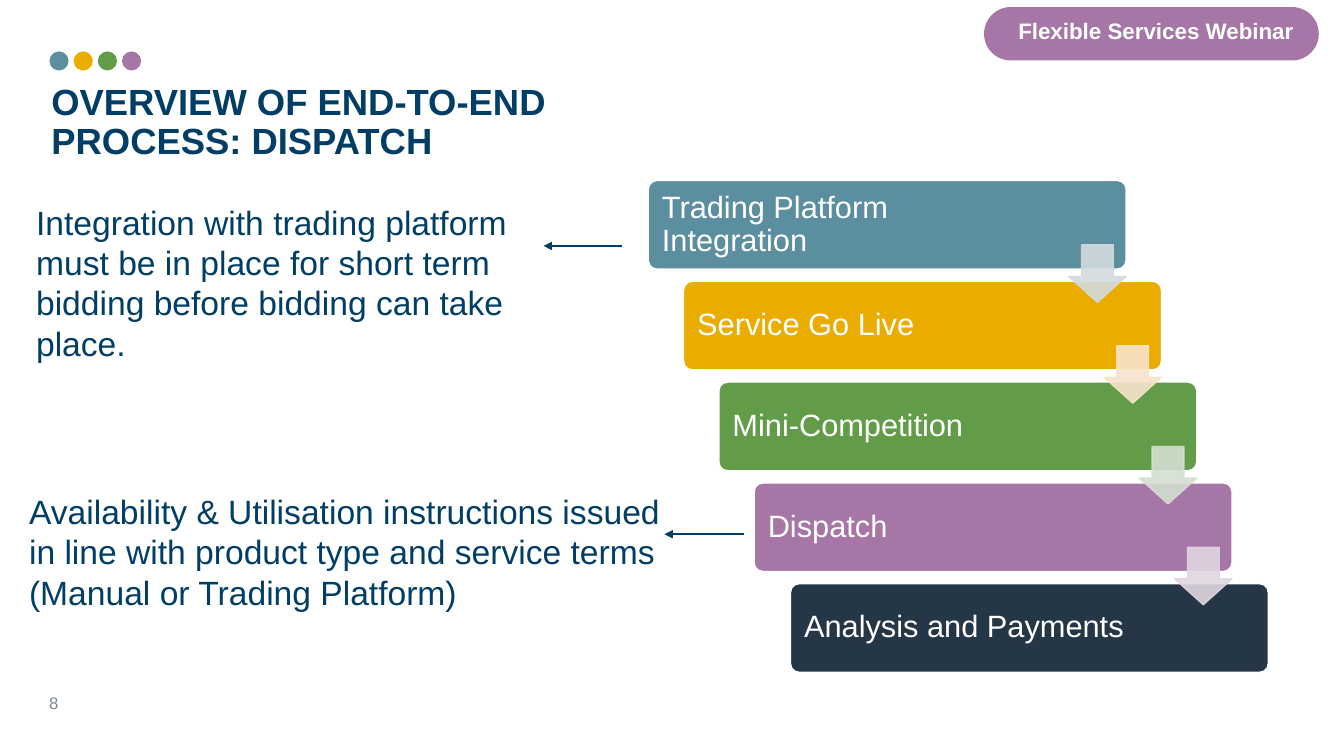
from lxml import etree
from pptx import Presentation
from pptx import util as u
from pptx.dml.color import RGBColor
from pptx.enum import shapes, text
from pptx.oxml.ns import qn

NAVY, WHITE, GREY = "003E66", "FFFFFF", "808999"
TEAL, AMBER, GREEN, PURPLE, SLATE = "5B8E9F", "EBAC00", "629C49", "A677A6", "253746"

HEADING = "OVERVIEW OF END-TO-END PROCESS: DISPATCH"
BADGE = "Flexible Services Webinar"
PAGE = "8"
DOTS = [TEAL, AMBER, GREEN, PURPLE]
STAGES = [
    ("Trading Platform Integration", TEAL),
    ("Service Go Live", AMBER),
    ("Mini-Competition", GREEN),
    ("Dispatch", PURPLE),
    ("Analysis and Payments", SLATE),
]
STEP_TINTS = ["D2DBDF", "F7E3CC", "D3DED0", "E1D6E1"]
NOTES = [
    ("Integration with trading platform must be in place for short term "
     "bidding before bidding can take place.",
     (26, 195, 499, 212), (617, 539, 244)),
    ("Availability & Utilisation instructions issued in line with product "
     "type and service terms (Manual or Trading Platform)",
     (19, 482, 670, 155), (738, 659, 530)),
]


def px(n):
    return u.Emu(n * 9144)


def colour(value):
    return RGBColor.from_string(value)


def write(shape, words, size, tint, bold=False, insets=(10, 5, 10, 5),
          anchor=text.MSO_ANCHOR.TOP, align=text.PP_ALIGN.LEFT, spacing=None):
    frame = shape.text_frame
    frame.text = words
    frame.word_wrap = True
    frame.auto_size = text.MSO_AUTO_SIZE.NONE
    frame.vertical_anchor = anchor
    (frame.margin_left, frame.margin_top,
     frame.margin_right, frame.margin_bottom) = map(px, insets)
    paragraph = frame.paragraphs[0]
    paragraph.alignment = align
    if spacing:
        paragraph.line_spacing = spacing
    font = paragraph.runs[0].font
    font.name, font.size, font.bold = "Arial", u.Pt(size), bold
    font.color.rgb = colour(tint)


def draw(kind, box, fill, line=None, adjust=()):
    shape = slide.shapes.add_shape(kind, *map(px, box))
    shape.shadow.inherit = False
    shape.fill.solid()
    shape.fill.fore_color.rgb = colour(fill)
    if line:
        shape.line.color.rgb = colour(line)
        shape.line.width = u.Pt(1)
    else:
        shape.line.fill.background()
    for i, value in enumerate(adjust):
        shape.adjustments[i] = value
    return shape


def add_pointer(start, end, y):
    pointer = slide.shapes.add_connector(
        shapes.MSO_CONNECTOR.STRAIGHT, px(start), px(y), px(end), px(y))
    pointer.line.color.rgb = colour(NAVY)
    pointer.line.width = u.Pt(1.5)
    etree.SubElement(pointer.line._get_or_add_ln(), qn("a:tailEnd"), type="triangle")
    etree.SubElement(pointer._element.spPr, qn("a:effectLst"))


deck = Presentation()
deck.slide_width, deck.slide_height = px(1333), px(750)
slide = deck.slides.add_slide(deck.slide_layouts[5])
SHAPE, MIDDLE = shapes.MSO_SHAPE, text.MSO_ANCHOR.MIDDLE

heading = slide.shapes.title
heading.left, heading.top, heading.width, heading.height = map(px, (51, 84, 616, 76))
write(heading, HEADING, 26, NAVY, bold=True, insets=(0, 0, 0, 0),
      anchor=MIDDLE, spacing=0.9)

page = slide.shapes.add_textbox(*map(px, (39, 682, 73, 30)))
write(page, PAGE, 12, GREY)

for i, tint in enumerate(DOTS):
    draw(SHAPE.OVAL, (49 + 24 * i, 51, 19, 19), tint)

badge = draw(SHAPE.ROUNDED_RECTANGLE, (976, 7, 332, 53), PURPLE, adjust=[0.5])
write(badge, BADGE, 16, WHITE, bold=True, insets=(16, 0, 7, 6),
      anchor=MIDDLE, align=text.PP_ALIGN.CENTER)

for words, box, pointer in NOTES:
    write(slide.shapes.add_textbox(*map(px, box)), words, 24, NAVY)
    add_pointer(*pointer)

for i, (words, tint) in enumerate(STAGES):
    stage = draw(SHAPE.ROUNDED_RECTANGLE, (643 + 141 * i // 4, 179 + 100 * i, 474, 88),
                 tint, WHITE, [0.1])
    write(stage, words, 22, WHITE, insets=(11, 9, 115, 9), anchor=MIDDLE, spacing=0.9)

for i, tint in enumerate(STEP_TINTS):
    step = draw(SHAPE.DOWN_ARROW, (1060 + 141 * i // 4, 243 + 100 * i, 57, 57),
                tint, tint, [0.55, 0.45])
    for shade in step._element.spPr.iter(qn("a:srgbClr")):
        etree.SubElement(shade, qn("a:alpha"), val="90000")

deck.save("out.pptx")
